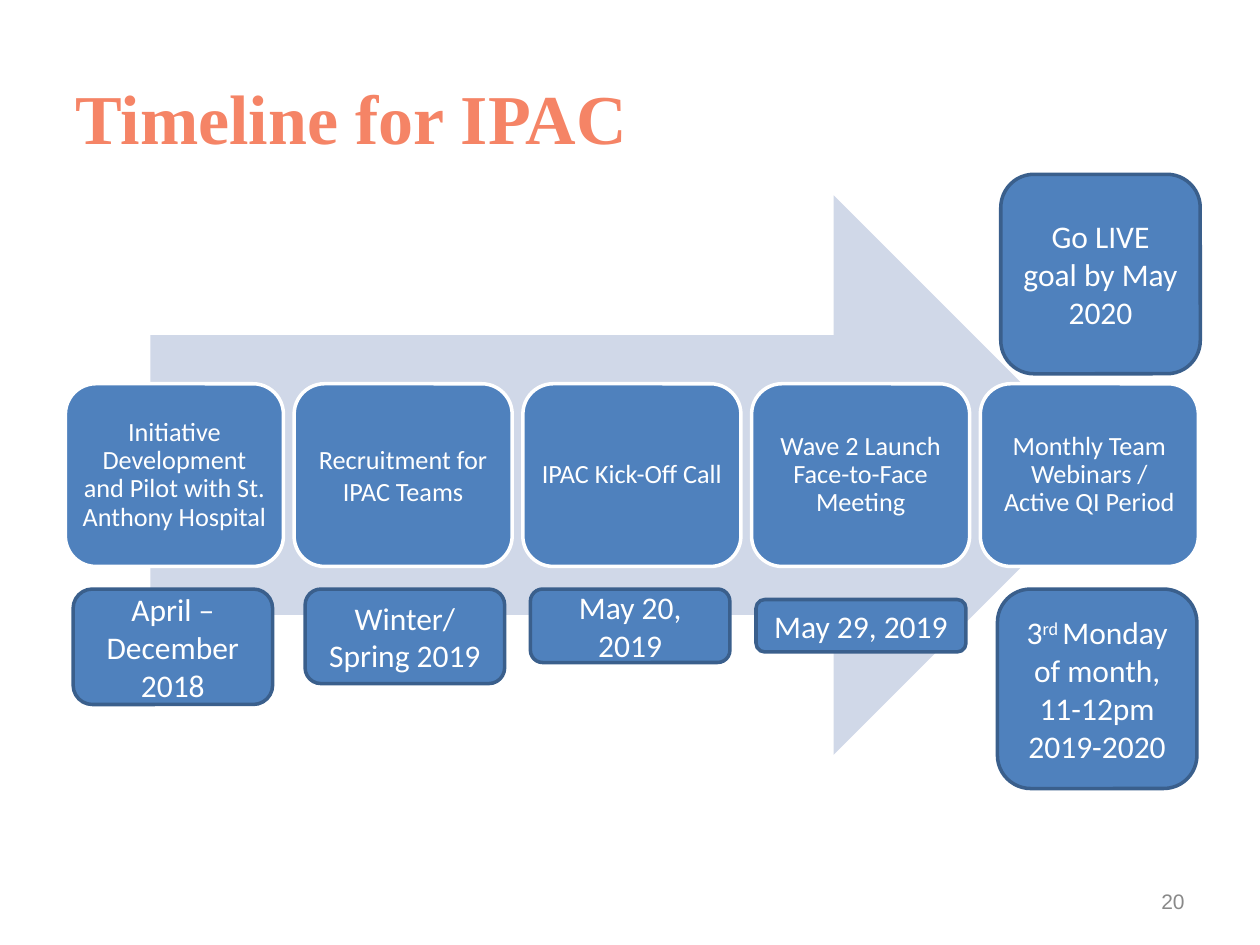
from pptx import Presentation
from pptx.dml.color import RGBColor
from pptx.enum.shapes import MSO_SHAPE
from pptx.enum.text import MSO_ANCHOR, PP_ALIGN
from pptx.util import Pt

BLUE, DARK_BLUE, PALE_BLUE = "4F81BD", "3A5F8C", "D0D8E8"
WHITE, CORAL, GRAY = "FFFFFF", "F58466", "898989"

STEPS = [
    "Initiative Development and Pilot with St. Anthony Hospital",
    "Recruitment for IPAC Teams",
    "IPAC Kick-Off Call",
    "Wave 2 Launch Face-to-Face Meeting",
    "Monthly Team Webinars / Active QI Period",
]

# Left, top, width, height within the timeline box, then the paragraphs;
# a paragraph is a string or a list of (text, baseline) runs
DATES = [
    ((4.4, 225, 114, 66), ["April – December 2018"]),
    ((137, 225, 114, 54), ["Winter/ Spring 2019"]),
    ((265.7, 225, 114, 42), ["May 20, 2019"]),
    ((394.6, 231, 120, 30), ["May 29, 2019"]),
    ((532.6, 225, 114, 114),
     [[("3", 0), ("rd ", 30000), ("Monday of month, 11-12pm", 0)], "2019-2020"]),
    ((534.5, -12, 114, 114), ["Go LIVE goal by May 2020"]),
]


def color(value):
    return RGBColor.from_string(value)


def write_text(shape, paragraphs, *, size, font="Calibri", fill=WHITE, bold=False,
               align=PP_ALIGN.CENTER, line_spacing=1.0, inset=None):
    frame = shape.text_frame
    frame.word_wrap = True
    frame.vertical_anchor = MSO_ANCHOR.MIDDLE
    if inset is not None:
        frame.margin_left = frame.margin_right = Pt(inset)
        frame.margin_top = frame.margin_bottom = Pt(inset)
    for index, content in enumerate(paragraphs):
        paragraph = frame.add_paragraph() if index else frame.paragraphs[0]
        paragraph.alignment = align
        paragraph.line_spacing = line_spacing
        runs = [(content, 0)] if isinstance(content, str) else content
        for text, baseline in runs:
            run = paragraph.add_run()
            run.text = text
            run.font.name = font
            run.font.size = Pt(size)
            run.font.bold = bold
            run.font.color.rgb = color(fill)
            if baseline:
                run._r.get_or_add_rPr().set("baseline", str(baseline))


def add_block(slide, kind, box, fill, line=None):
    shape = slide.shapes.add_shape(kind, *map(Pt, box))
    shape.shadow.inherit = False
    shape.fill.solid()
    shape.fill.fore_color.rgb = color(fill)
    if line:
        shape.line.color.rgb = color(line)
        shape.line.width = Pt(2)
    else:
        shape.line.fill.background()
    return shape


def add_label(slide, box, text, **text_format):
    write_text(slide.shapes.add_textbox(*map(Pt, box)), [text], **text_format)


def add_timeline(slide, left, top, width, height):
    # Background arrow
    add_block(slide, MSO_SHAPE.RIGHT_ARROW,
              (left + 0.075 * width, top, 0.85 * width, height), PALE_BLUE)

    # Row of equal steps, centred on the arrow
    gap = 6.1
    step_width = (width - gap * (len(STEPS) - 1)) / len(STEPS)
    step_height = 104.4
    step_top = top + (height - step_height) / 2
    for index, text in enumerate(STEPS):
        step_left = left + index * (step_width + gap)
        step = add_block(slide, MSO_SHAPE.ROUNDED_RECTANGLE,
                         (step_left, step_top, step_width, step_height), BLUE, WHITE)
        spacing = 1.0 if text.startswith("Recruitment") else 0.9
        write_text(step, [text], size=15, line_spacing=spacing, inset=4.5)

    # Dates below the steps and the goal above the last one
    for (x, y, date_width, date_height), paragraphs in DATES:
        date = add_block(slide, MSO_SHAPE.ROUNDED_RECTANGLE,
                         (left + x, top + y, date_width, date_height), BLUE, DARK_BLUE)
        write_text(date, paragraphs, size=18)


def main():
    presentation = Presentation()
    presentation.slide_width, presentation.slide_height = Pt(720), Pt(540)
    slide = presentation.slides.add_slide(presentation.slide_layouts[6])

    # Title and slide number
    add_label(slide, (36, 21.6, 648, 90), "Timeline for IPAC", size=40,
              font="Times New Roman", fill=CORAL, bold=True, align=PP_ALIGN.LEFT)
    add_label(slide, (516, 500.5, 168, 28.8), "20", size=12, font="Arial",
              fill=GRAY, align=PP_ALIGN.RIGHT)

    add_timeline(slide, 37.4, 111.6, 647.4, 319.8)
    presentation.save("out.pptx")


if __name__ == "__main__":
    main()
